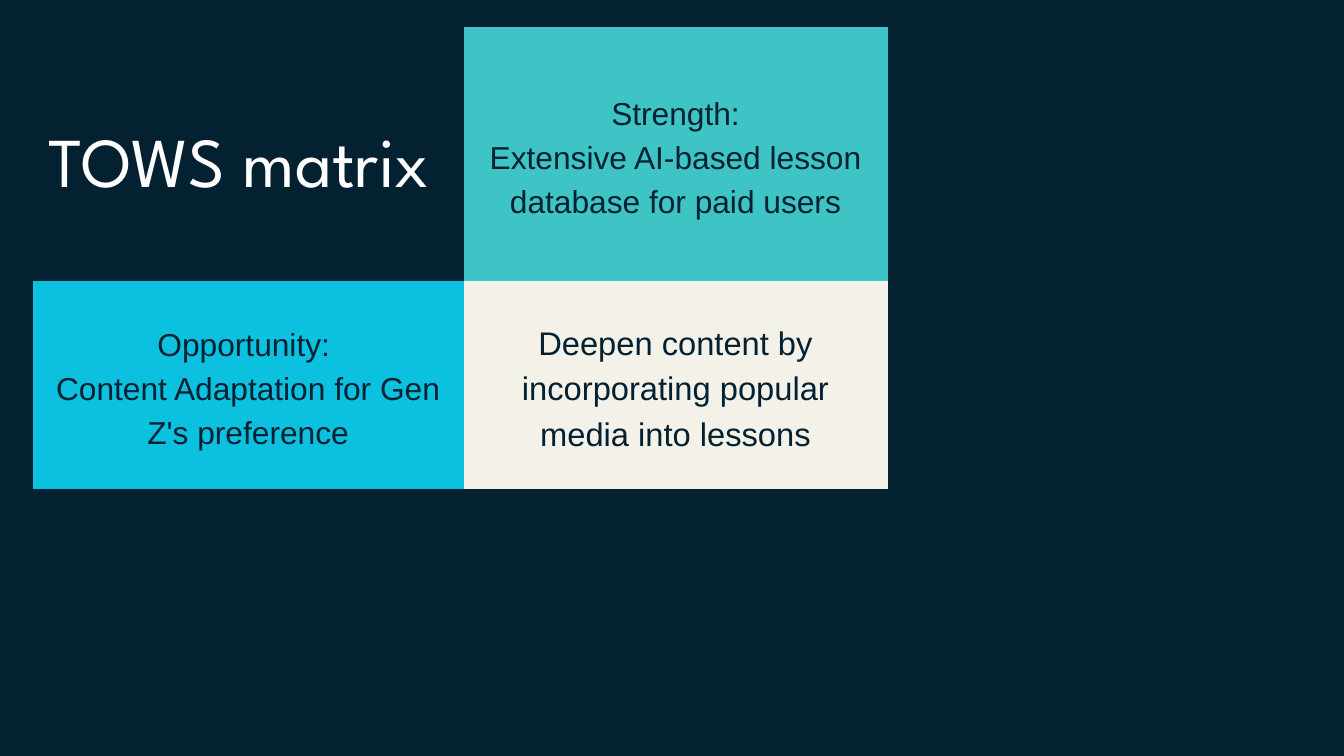
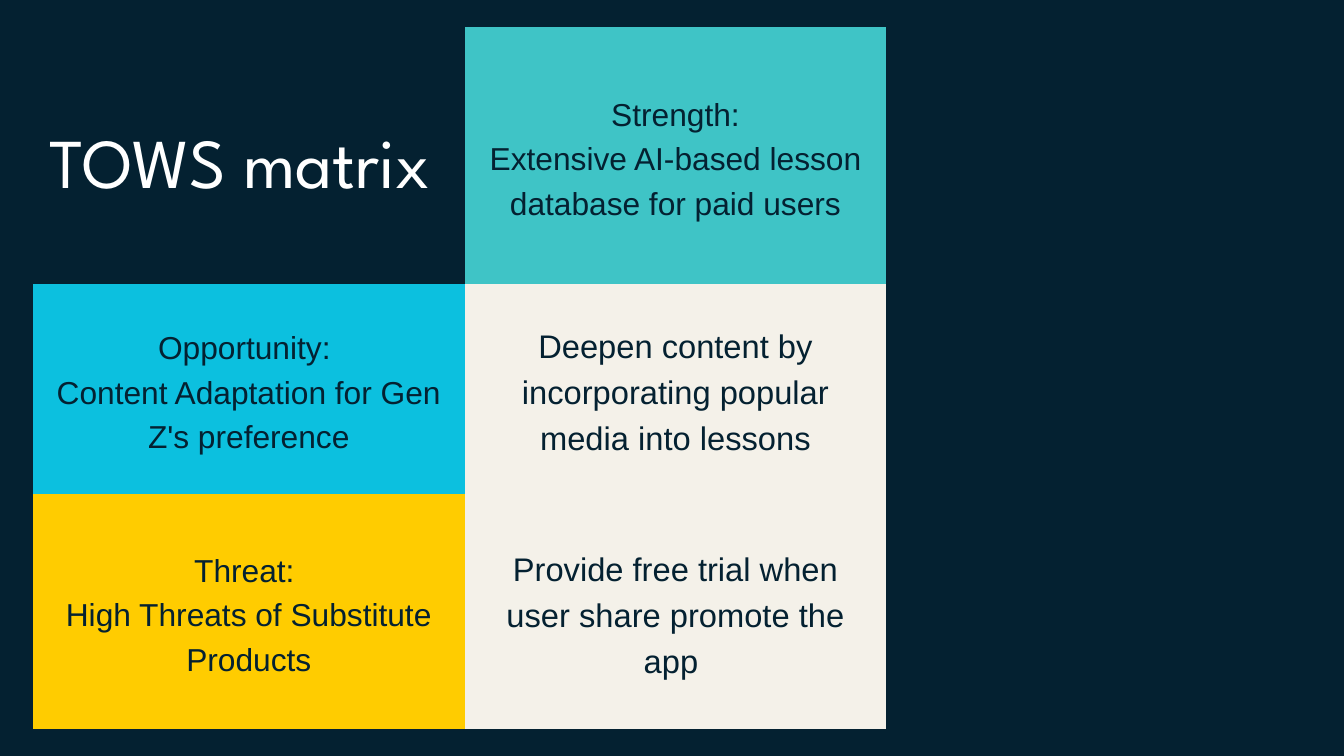
from dataclasses import dataclass

from lxml import etree
from pptx import Presentation
from pptx import util as u
from pptx.dml import color
from pptx.enum import text
from pptx.oxml import ns

NAVY, TEAL, CYAN = "042131", "3FC4C6", "0CC0DF"
YELLOW, CREAM, WHITE, GREY = "FFCC00", "F4F1E9", "FFFFFF", "CCCCCC"
LEFT, TOP, INSET = u.Cm(1.24), u.Cm(1.02), u.Cm(0.53)
LEADING = 1.4


@dataclass(frozen=True)
class CellStyle:
    """Look of one kind of matrix cell."""

    size: int
    font: str = "Arial"
    ink: str = NAVY


@dataclass(frozen=True)
class MatrixCell:
    """Paragraphs of a cell with its style and fill."""

    lines: tuple[str, ...]
    style: CellStyle
    fill: str | None = None


@dataclass(frozen=True)
class Matrix:
    """Column widths and row heights in centimetres, with the rows of cells."""

    widths: tuple[float, ...]
    heights: tuple[float, ...]
    rows: tuple[tuple[MatrixCell, ...], ...]


TITLE = CellStyle(75, "League Spartan", WHITE)
FACTOR = CellStyle(34)
STRATEGY = CellStyle(35)

HEADER_ROW = (
    MatrixCell(("TOWS matrix ",), TITLE),
    MatrixCell(("Strength:", "Extensive AI-based lesson database for paid users"), FACTOR, TEAL),
)
OPPORTUNITY_ROW = (
    MatrixCell(("Opportunity: ", "Content Adaptation for Gen Z's preference"), FACTOR, CYAN),
    MatrixCell(("Deepen content by incorporating popular media into lessons",), STRATEGY, CREAM),
)
THREAT_ROW = (
    MatrixCell(("Threat: ", "High Threats of Substitute Products"), FACTOR, YELLOW),
    MatrixCell(("Provide free trial when user share promote the app ",), STRATEGY, CREAM),
)

MATRICES = (
    Matrix((16.28, 16.03), (9.6, 7.87), (HEADER_ROW, OPPORTUNITY_ROW)),
    Matrix((16.33, 15.93), (9.7, 7.95, 8.89), (HEADER_ROW, OPPORTUNITY_ROW, THREAT_ROW)),
)


def paint(fill, hex_color: str) -> None:
    """Make a fill solid in the given colour."""
    fill.solid()
    fill.fore_color.rgb = color.RGBColor.from_string(hex_color)


def add_borders(cell) -> None:
    """Give a cell zero-width borders on all four sides."""
    properties = cell._tc.get_or_add_tcPr()
    for side in ("a:lnL", "a:lnR", "a:lnT", "a:lnB"):
        line = etree.SubElement(properties, ns.qn(side), w="0")
        solid = etree.SubElement(line, ns.qn("a:solidFill"))
        etree.SubElement(solid, ns.qn("a:srgbClr"), val=GREY)


def write_lines(frame, lines: tuple[str, ...], style: CellStyle) -> None:
    """Write centred paragraphs into a text frame."""
    for index, line in enumerate(lines):
        paragraph = frame.add_paragraph() if index else frame.paragraphs[0]
        paragraph.alignment = text.PP_ALIGN.CENTER
        paragraph.line_spacing = u.Pt(style.size * LEADING)
        run = paragraph.add_run()
        run.text = line
        run.font.size = u.Pt(style.size)
        run.font.name = style.font
        paint(run.font.fill, style.ink)


def draw_cell(cell, content: MatrixCell) -> None:
    """Format and fill one table cell."""
    cell.margin_left = cell.margin_right = INSET
    cell.margin_top = cell.margin_bottom = INSET
    cell.vertical_anchor = text.MSO_ANCHOR.MIDDLE
    add_borders(cell)
    if content.fill:
        paint(cell.fill, content.fill)
    else:
        cell.fill.background()
    write_lines(cell.text_frame, content.lines, content.style)


def draw_matrix(slide, matrix: Matrix) -> None:
    """Add a matrix to a slide as a table."""
    table = slide.shapes.add_table(
        len(matrix.heights), len(matrix.widths), LEFT, TOP,
        u.Cm(sum(matrix.widths)), u.Cm(sum(matrix.heights)),
    ).table
    table.first_row = table.horz_banding = False
    for column, width in zip(table.columns, matrix.widths):
        column.width = u.Cm(width)
    for row, height, contents in zip(table.rows, matrix.heights, matrix.rows):
        row.height = u.Cm(height)
        for cell, content in zip(row.cells, contents):
            draw_cell(cell, content)


def main() -> None:
    """Build the presentation and save it."""
    presentation = Presentation()
    presentation.slide_width, presentation.slide_height = u.Cm(50.8), u.Cm(28.58)
    for matrix in MATRICES:
        slide = presentation.slides.add_slide(presentation.slide_layouts[6])
        paint(slide.background.fill, NAVY)
        draw_matrix(slide, matrix)
    presentation.save("out.pptx")


if __name__ == "__main__":
    main()
